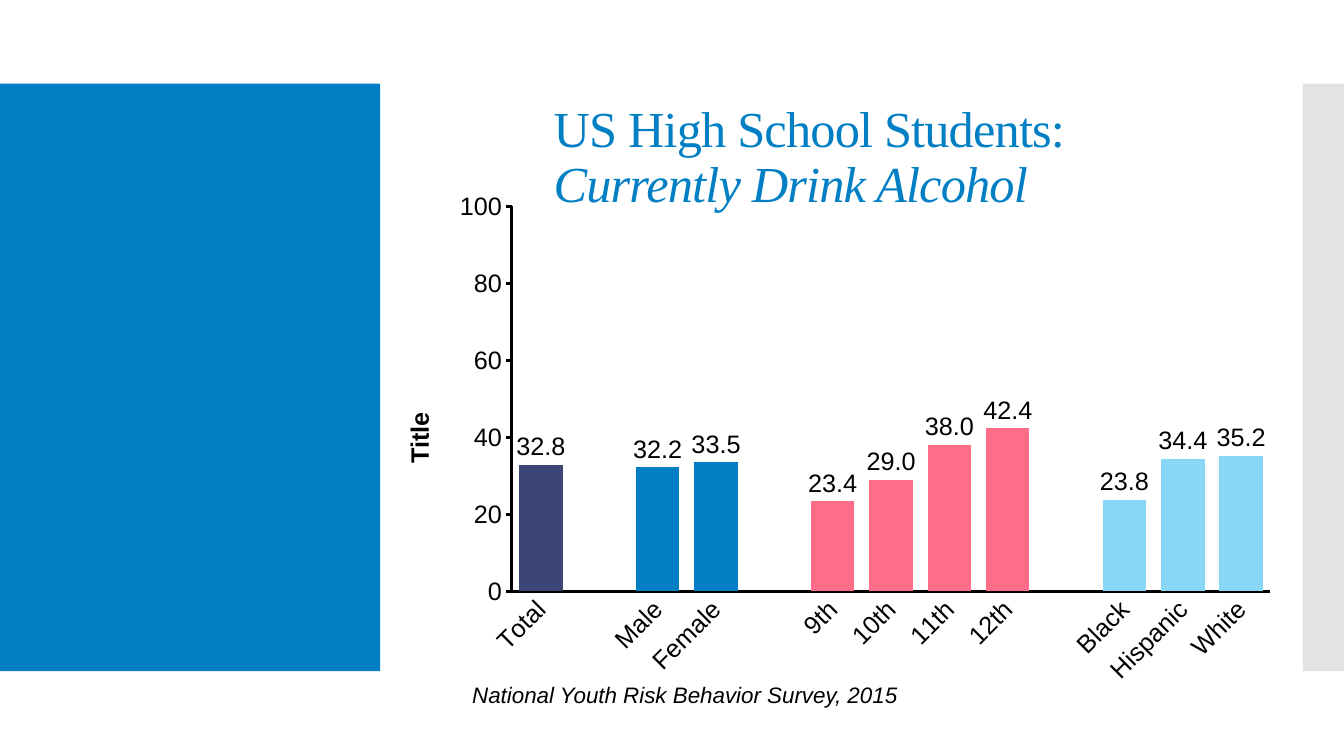
from dataclasses import dataclass
from typing import Any

from lxml import etree
from pptx import Presentation
from pptx import util as u
from pptx.chart import data as cd
from pptx.dml.color import RGBColor
from pptx.enum import chart as ce, shapes, text
from pptx.oxml import ns

BLUE = RGBColor(0x00, 0x7F, 0xC4)
GREY = RGBColor(0xC8, 0xC8, 0xC8)
BLACK = RGBColor(0, 0, 0)
NAVY = RGBColor(0x3C, 0x46, 0x76)
PINK = RGBColor(0xFF, 0x6D, 0x88)
SKY = RGBColor(0x89, 0xD6, 0xF7)


@dataclass
class Band:
    left: float
    width: float
    color: RGBColor
    alpha: int


@dataclass
class Group:
    color: RGBColor
    rates: dict[str, float]


BANDS = [Band(0, 3.77, BLUE, 100), Band(12.92, 0.42, GREY, 50)]
GROUPS = [
    Group(NAVY, {"Total": 32.8}),
    Group(BLUE, {"Male": 32.2, "Female": 33.5}),
    Group(PINK, {"9th": 23.4, "10th": 29.0, "11th": 38.0, "12th": 42.4}),
    Group(SKY, {"Black": 23.8, "Hispanic": 34.4, "White": 35.2}),
]
LABEL = {"name": "Arial", "size": u.Pt(18), "bold": False}
AXIS = {"name": "Arial", "size": u.Pt(18), "bold": True}
NOTE = {"name": "Arial", "size": u.Pt(16), "italic": True}
HEAD = {"name": "Times New Roman", "size": u.Pt(36)}
PLOT = {"x": 0.144, "y": 0.047, "w": 0.836, "h": 0.752}


def assign(item: Any, values: dict[str, Any]) -> None:
    for key, value in values.items():
        setattr(item, key, value)


def style(font: Any, values: dict[str, Any], color: RGBColor) -> None:
    assign(font, values)
    font.color.rgb = color


def draw_band(slide: Any, band: Band) -> None:
    rect = slide.shapes.add_shape(
        shapes.MSO_SHAPE.RECTANGLE, u.Inches(band.left), u.Inches(0.83),
        u.Inches(band.width), u.Inches(5.83))
    rect.shadow.inherit = False
    rect.fill.solid()
    rect.fill.fore_color.rgb = band.color
    rect.line.fill.background()
    if band.alpha < 100:
        tint = rect.fill._xPr.find(".//" + ns.qn("a:srgbClr"))
        etree.SubElement(tint, ns.qn("a:alpha")).set("val", str(band.alpha * 1000))


def draw_note(slide: Any) -> None:
    box = slide.shapes.add_textbox(
        u.Inches(3.5), u.Inches(6.71), u.Inches(5.5), u.Inches(0.64))
    box.text_frame.word_wrap = True
    para = box.text_frame.paragraphs[0]
    para.alignment = text.PP_ALIGN.RIGHT
    run = para.add_run()
    run.text = "National Youth Risk Behavior Survey, 2015"
    style(run.font, NOTE, BLACK)


def draw_title(slide: Any) -> None:
    title = slide.shapes.title
    assign(title, {"left": u.Inches(5.39), "top": u.Inches(0.9),
                   "width": u.Inches(6.83), "height": u.Inches(1.35)})
    frame = title.text_frame
    assign(frame, {"auto_size": text.MSO_AUTO_SIZE.NONE, "word_wrap": True,
                   "vertical_anchor": text.MSO_ANCHOR.MIDDLE})
    para = frame.paragraphs[0]
    assign(para, {"alignment": text.PP_ALIGN.LEFT, "line_spacing": 0.9})
    lines = ["US High School Students:", "Currently Drink Alcohol"]
    for row, words in enumerate(lines):
        if row:
            para.add_line_break()
        run = para.add_run()
        run.text = words
        style(run.font, HEAD | {"italic": row == 1}, BLUE)
        run.font._element.set("spc", "-60")


def place_plot(chart: Any) -> None:
    area = chart._chartSpace.chart.plotArea
    for old in area.findall(ns.qn("c:layout")):
        area.remove(old)
    layout = etree.Element(ns.qn("c:layout"))
    area.insert(0, layout)
    manual = etree.SubElement(layout, ns.qn("c:manualLayout"))
    values = {"layoutTarget": "inner", "xMode": "edge", "yMode": "edge"} | PLOT
    for key, value in values.items():
        etree.SubElement(manual, ns.qn("c:" + key)).set("val", str(value))


def draw_chart(slide: Any) -> None:
    names, rates, colors = [], [], []
    for group in GROUPS:
        if names:
            names.append("")
            rates.append(None)
            colors.append(None)
        names.extend(group.rates)
        rates.extend(group.rates.values())
        colors.extend([group.color] * len(group.rates))
    data = cd.CategoryChartData()
    data.categories = names
    data.add_series("Series 1", rates)
    chart = slide.shapes.add_chart(
        ce.XL_CHART_TYPE.COLUMN_CLUSTERED, u.Inches(3.78), u.Inches(1.81),
        u.Inches(9), u.Inches(5.08), data).chart
    assign(chart, {"has_legend": False, "has_title": False})
    style(chart.font, LABEL, BLACK)

    plot = chart.plots[0]
    assign(plot, {"gap_width": 34, "overlap": 100,
                  "vary_by_categories": False, "has_data_labels": True})
    assign(plot.data_labels, {
        "show_value": True, "number_format": "#,##0.0",
        "number_format_is_linked": False,
        "position": ce.XL_LABEL_POSITION.OUTSIDE_END})
    style(plot.data_labels.font, LABEL, BLACK)
    bars = plot.series[0]
    bars.format.fill.solid()
    bars.format.fill.fore_color.rgb = BLUE
    for index, color in enumerate(colors):
        if color is not None:
            fill = bars.points[index].format.fill
            fill.solid()
            fill.fore_color.rgb = color

    ticks = ce.XL_TICK_MARK
    base, scale = chart.category_axis, chart.value_axis
    for axis, mark in ((base, ticks.NONE), (scale, ticks.OUTSIDE)):
        assign(axis, {"has_major_gridlines": False, "major_tick_mark": mark,
                      "minor_tick_mark": ticks.NONE})
        axis.format.line.color.rgb = BLACK
        axis.format.line.width = u.Pt(2)
        style(axis.tick_labels.font, LABEL, BLACK)
    turn = base._element.find(".//" + ns.qn("a:bodyPr"))
    turn.set("rot", "-2700000")
    turn.set("vert", "horz")
    assign(scale, {"minimum_scale": 0, "maximum_scale": 100, "major_unit": 20})
    para = scale.axis_title.text_frame.paragraphs[0]
    run = para.add_run()
    run.text = "Title"
    style(run.font, AXIS, BLACK)
    side = scale.axis_title._element.find(".//" + ns.qn("a:bodyPr"))
    side.set("rot", "-5400000")
    side.set("vert", "horz")
    place_plot(chart)


def main() -> None:
    deck = Presentation()
    assign(deck, {"slide_width": u.Inches(13.33), "slide_height": u.Inches(7.5)})
    slide = deck.slides.add_slide(deck.slide_layouts[5])
    for band in BANDS:
        draw_band(slide, band)
    draw_note(slide)
    draw_title(slide)
    draw_chart(slide)
    deck.save("out.pptx")


if __name__ == "__main__":
    main()
